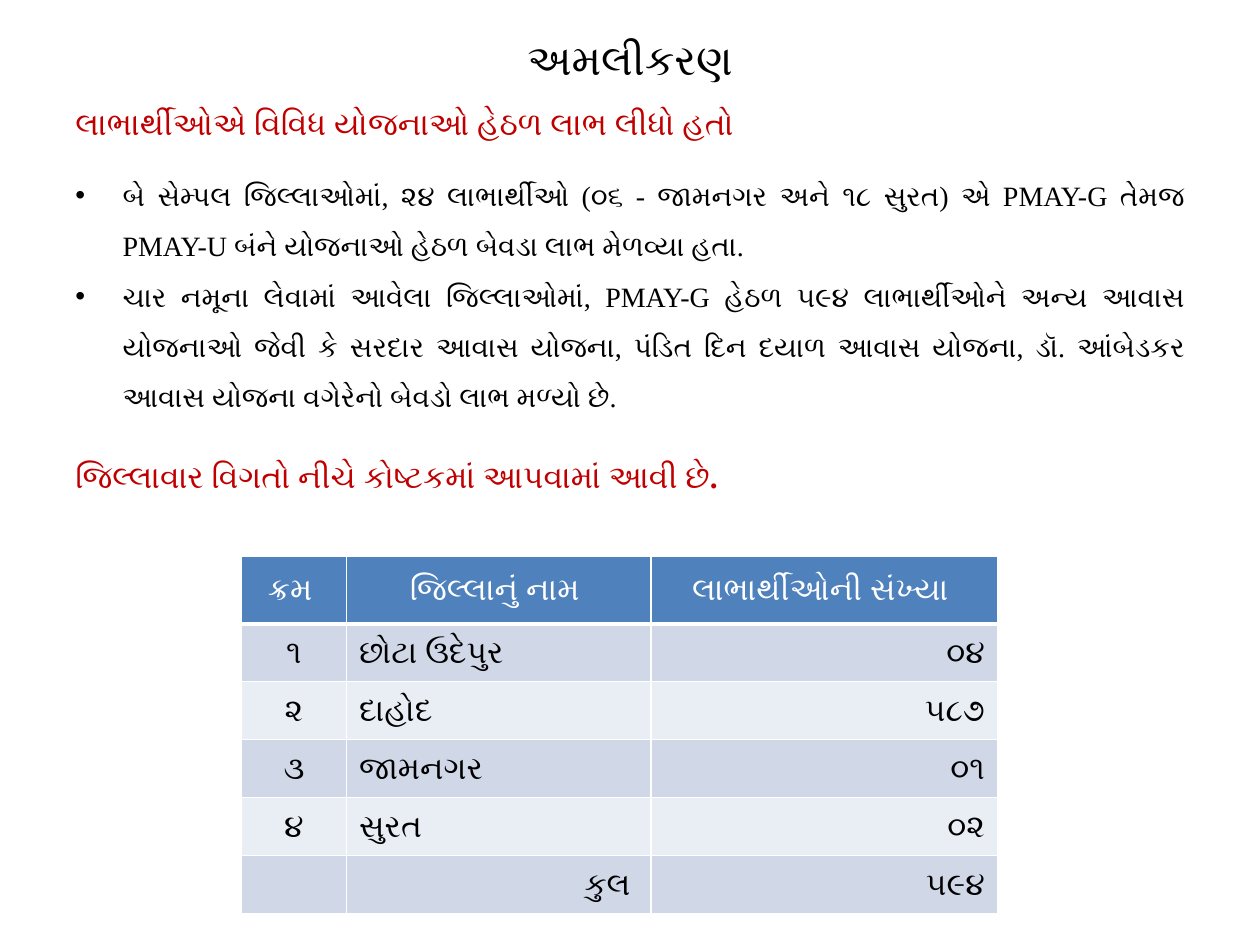
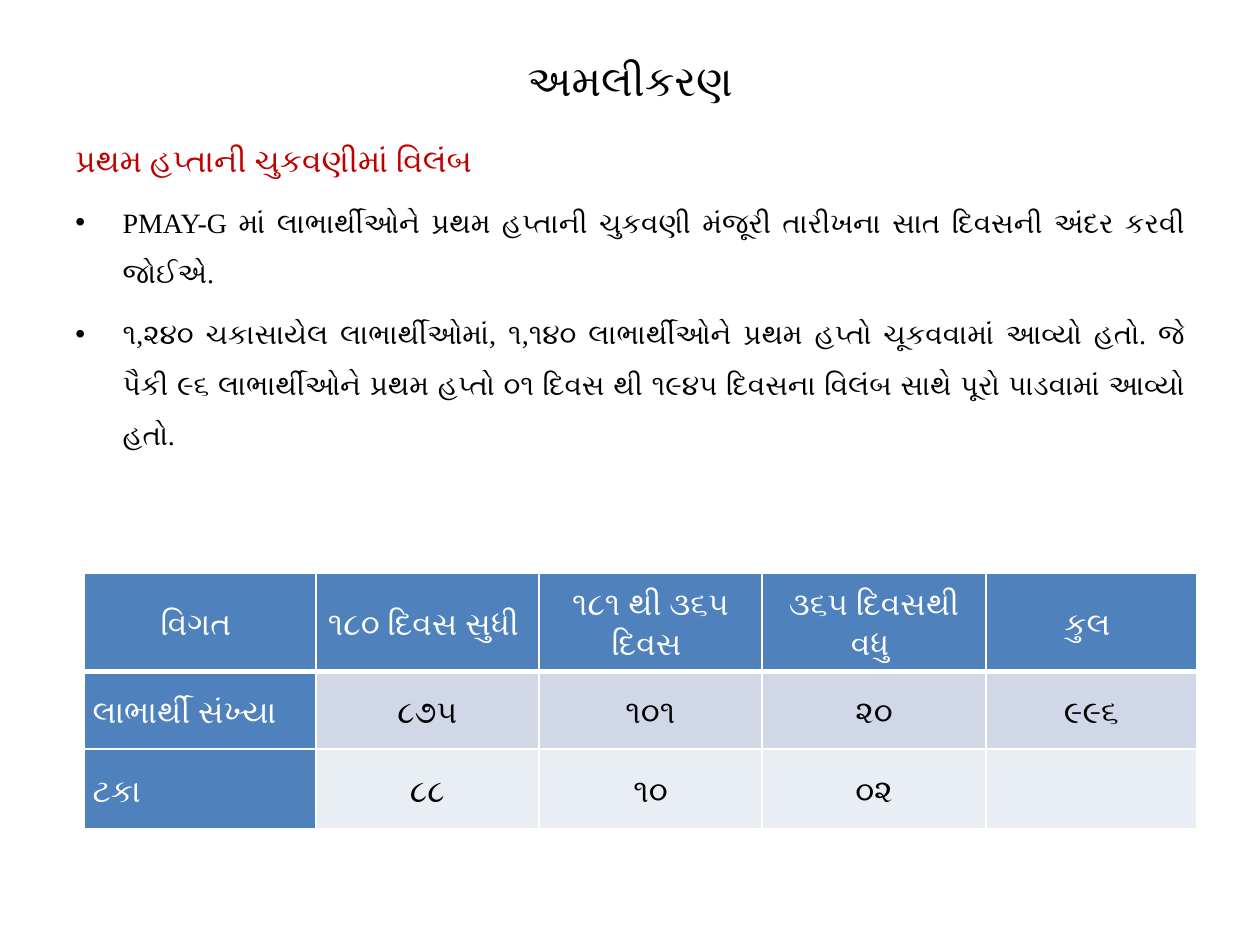
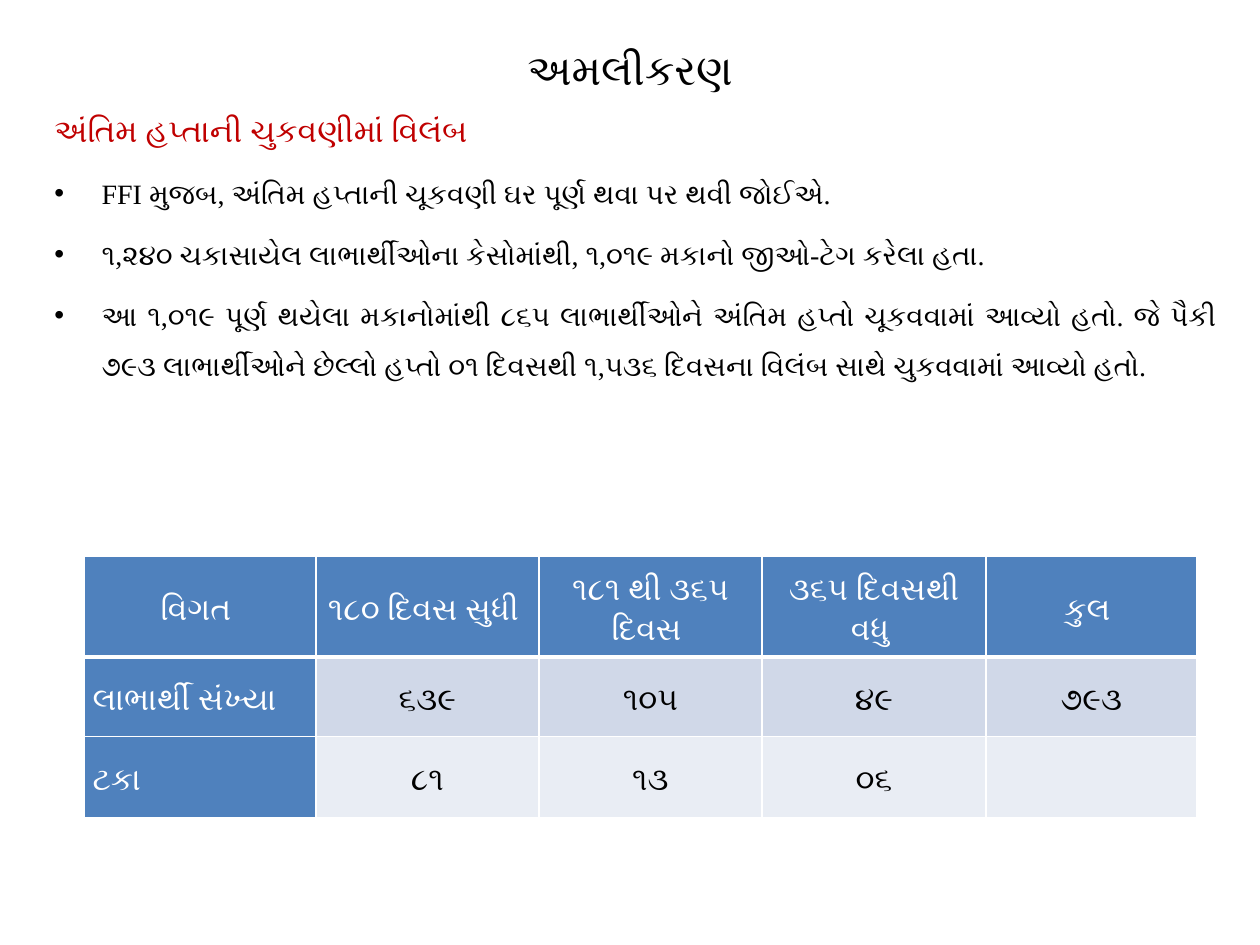
from lxml.etree import SubElement
from pptx import Presentation
from pptx.dml.color import RGBColor
from pptx.enum.text import MSO_ANCHOR, PP_ALIGN as Align
from pptx.oxml.ns import qn
from pptx.util import Pt

FONT = "Times New Roman"
BLACK, WHITE, RED, BLUE = "000000", "FFFFFF", "C00000", "4F81BD"
BANDS = ["D0D8E8", "E9EDF4"]
TITLE = {"size": Pt(24), "bold": True, "color": BLACK}
HEADING = {"size": Pt(18), "bold": True, "color": RED}
BODY = {"size": Pt(16), "bold": False, "color": BLACK}
CELL = {"size": Pt(18), "bold": False, "color": BLACK}
CELL_HEADER = {"size": Pt(18), "bold": True, "color": WHITE}
DELAY_HEADER = ["વિગત ", "૧૮૦ દિવસ સુધી ", "૧૮૧ થી ૩૬૫ દિવસ ", "૩૬૫ દિવસથી વધુ ", "કુલ "]
DELAY_COLUMNS = [132.5, 127.5, 127.5, 128, 120.5]


def rgb(value):
    return RGBColor.from_string(value)


def write(paragraph, text, style, **layout):
    for name, value in layout.items():
        setattr(paragraph, name, value)
    run = paragraph.add_run()
    run.text = text
    for name, value in style.items():
        if name == "color":
            run.font.color.rgb = rgb(value)
        else:
            setattr(run.font, name, value)
    run.font.name = FONT
    SubElement(run.font._element, qn("a:cs"), typeface=FONT)


def add_text_box(slide, left, top, width, height):
    frame = slide.shapes.add_textbox(Pt(left), Pt(top), Pt(width), Pt(height)).text_frame
    frame.word_wrap = True
    return frame


def add_title(slide, top):
    frame = add_text_box(slide, 36, top, 648, 40)
    frame.vertical_anchor = MSO_ANCHOR.MIDDLE
    write(frame.paragraphs[0], "અમલીકરણ", TITLE, alignment=Align.CENTER)


def add_heading(paragraph, text, spacing, before):
    write(paragraph, text, HEADING, alignment=Align.JUSTIFY,
          line_spacing=spacing, space_before=Pt(before))


def add_bullet(frame, text, before):
    paragraph = frame.add_paragraph()
    write(paragraph, text, BODY, alignment=Align.JUSTIFY,
          line_spacing=1.5, space_before=Pt(before))
    properties = paragraph._p.get_or_add_pPr()
    properties.set("marL", str(Pt(27)))
    properties.set("indent", str(-Pt(27)))
    SubElement(properties, qn("a:buFont"), typeface="Arial")
    SubElement(properties, qn("a:buChar"), char="•")


def add_borders(cell, top, bottom):
    properties = cell._tc.get_or_add_tcPr()
    for side, width in {"L": 1, "R": 1, "T": top, "B": bottom}.items():
        line = SubElement(properties, qn(f"a:ln{side}"), w=str(Pt(width)))
        SubElement(SubElement(line, qn("a:solidFill")), qn("a:srgbClr"), val=WHITE)


def add_table(slide, left, top, widths, heights, rows, alignments,
              label_column=False, spacing=1.0, margins=(7.2, 3.6)):
    table = slide.shapes.add_table(len(rows), len(widths), Pt(left), Pt(top),
                                   Pt(sum(widths)), Pt(sum(heights))).table
    for column, width in zip(table.columns, widths):
        column.width = Pt(width)
    for row, height in zip(table.rows, heights):
        row.height = Pt(height)
    for r, texts in enumerate(rows):
        for c, text in enumerate(texts):
            cell = table.cell(r, c)
            is_header = r == 0 or (label_column and c == 0)
            cell.vertical_anchor = MSO_ANCHOR.MIDDLE
            cell.margin_left = cell.margin_right = Pt(margins[0])
            cell.margin_top = cell.margin_bottom = Pt(margins[1])
            add_borders(cell, 3 if r == 1 else 1, 3 if r == 0 else 1)
            cell.fill.solid()
            cell.fill.fore_color.rgb = rgb(BLUE if is_header else BANDS[(r - 1) % 2])
            if text:
                write(cell.text_frame.paragraphs[0], text,
                      CELL_HEADER if is_header else CELL,
                      alignment=Align.CENTER if r == 0 else alignments[c],
                      line_spacing=spacing)
    return table


def add_delay_table(slide, top, heights, counts, shares):
    rows = [DELAY_HEADER, ["લાભાર્થી સંખ્યા ", *counts], ["ટકા ", *shares, ""]]
    add_table(slide, 48, top, DELAY_COLUMNS, heights, rows,
              [Align.JUSTIFY] + [Align.CENTER] * 4,
              label_column=True, spacing=1.15, margins=(5, 0))


def add_delay_text(slide, box, heading, spacing, before, bullets):
    frame = add_text_box(slide, *box)
    add_heading(frame.paragraphs[0], heading, spacing, before)
    for text in bullets:
        add_bullet(frame, text, 6)


def build_benefits(slide):
    add_title(slide, 13.5)
    frame = add_text_box(slide, 36, 52.5, 648, 469.5)
    add_heading(frame.paragraphs[0], "લાભાર્થીઓએ વિવિધ યોજનાઓ હેઠળ લાભ લીધો હતો", 1.15, 6)
    add_bullet(frame, "બે સેમ્પલ જિલ્લાઓમાં, ૨૪ લાભાર્થીઓ (૦૬ - જામનગર અને ૧૮ સુરત) એ PMAY-G તેમજ "
               "PMAY-U બંને યોજનાઓ હેઠળ બેવડા લાભ મેળવ્યા હતા.", 11.5)
    add_bullet(frame, "ચાર નમૂના લેવામાં આવેલા જિલ્લાઓમાં, PMAY-G હેઠળ ૫૯૪ લાભાર્થીઓને અન્ય આવાસ "
               "યોજનાઓ જેવી કે સરદાર આવાસ યોજના, પંડિત દિન દયાળ આવાસ યોજના, ડૉ. આંબેડકર "
               "આવાસ યોજના વગેરેનો બેવડો લાભ મળ્યો છે. ", 0)
    add_heading(frame.add_paragraph(), "જિલ્લાવાર વિગતો નીચે કોષ્ટકમાં આપવામાં આવી છે.", 1.15, 21.5)
    rows = [
        ["ક્રમ ", "જિલ્લાનું નામ ", "લાભાર્થીઓની સંખ્યા "],
        ["૧", "છોટા ઉદેપુર", "૦૪"],
        ["૨", "દાહોદ", "૫૮૭"],
        ["૩", "જામનગર", "૦૧"],
        ["૪", "સુરત", "૦૨"],
        ["", "કુલ ", "૫૯૪"],
    ]
    table = add_table(slide, 138, 318, [60, 174, 198], [38.5] + [33.1] * 5, rows,
                      [Align.CENTER, Align.LEFT, Align.RIGHT])
    table.cell(5, 1).text_frame.paragraphs[0].alignment = Align.RIGHT


def build_first_instalment(slide):
    add_delay_text(slide, (36, 66, 648, 246), "પ્રથમ હપ્તાની ચુકવણીમાં વિલંબ", 1.5, 0, [
        "PMAY-G માં લાભાર્થીઓને પ્રથમ હપ્તાની ચુકવણી મંજૂરી તારીખના સાત દિવસની અંદર કરવી જોઈએ.",
        "૧,૨૪૦ ચકાસાયેલ લાભાર્થીઓમાં, ૧,૧૪૦ લાભાર્થીઓને પ્રથમ હપ્તો ચૂકવવામાં આવ્યો હતો. જે "
        "પૈકી ૯૬ લાભાર્થીઓને પ્રથમ હપ્તો ૦૧ દિવસ થી ૧૯૪૫ દિવસના વિલંબ સાથે પૂરો પાડવામાં "
        "આવ્યો હતો.",
    ])
    add_delay_table(slide, 327.6, [56, 44.5, 45.5],
                    ["૮૭૫", "૧૦૧", "૨૦", "૯૯૬"], ["૮૮", "૧૦", "૦૨"])
    add_title(slide, 25.5)


def build_final_instalment(slide):
    add_delay_text(slide, (24, 60, 678, 228), "અંતિમ હપ્તાની ચુકવણીમાં વિલંબ", 1.0, 4, [
        "FFI મુજબ, અંતિમ હપ્તાની ચૂકવણી ઘર પૂર્ણ થવા પર થવી જોઈએ. ",
        "૧,૨૪૦ ચકાસાયેલ લાભાર્થીઓના કેસોમાંથી, ૧,૦૧૯ મકાનો જીઓ-ટેગ કરેલા હતા. ",
        "આ ૧,૦૧૯ પૂર્ણ થયેલા મકાનોમાંથી ૮૬૫ લાભાર્થીઓને અંતિમ હપ્તો ચૂકવવામાં આવ્યો હતો. "
        "જે પૈકી ૭૯૩ લાભાર્થીઓને છેલ્લો હપ્તો ૦૧ દિવસથી ૧,૫૩૬ દિવસના વિલંબ સાથે ચુકવવામાં "
        "આવ્યો હતો.",
    ])
    add_title(slide, 19.5)
    add_delay_table(slide, 318, [57.5, 45.5, 46.5],
                    ["૬૩૯", "૧૦૫", "૪૯", "૭૯૩"], ["૮૧", "૧૩", "૦૬"])


def main():
    presentation = Presentation()
    presentation.slide_width, presentation.slide_height = Pt(720), Pt(540)
    for build in (build_benefits, build_first_instalment, build_final_instalment):
        build(presentation.slides.add_slide(presentation.slide_layouts[6]))
    presentation.save("out.pptx")


if __name__ == "__main__":
    main()
